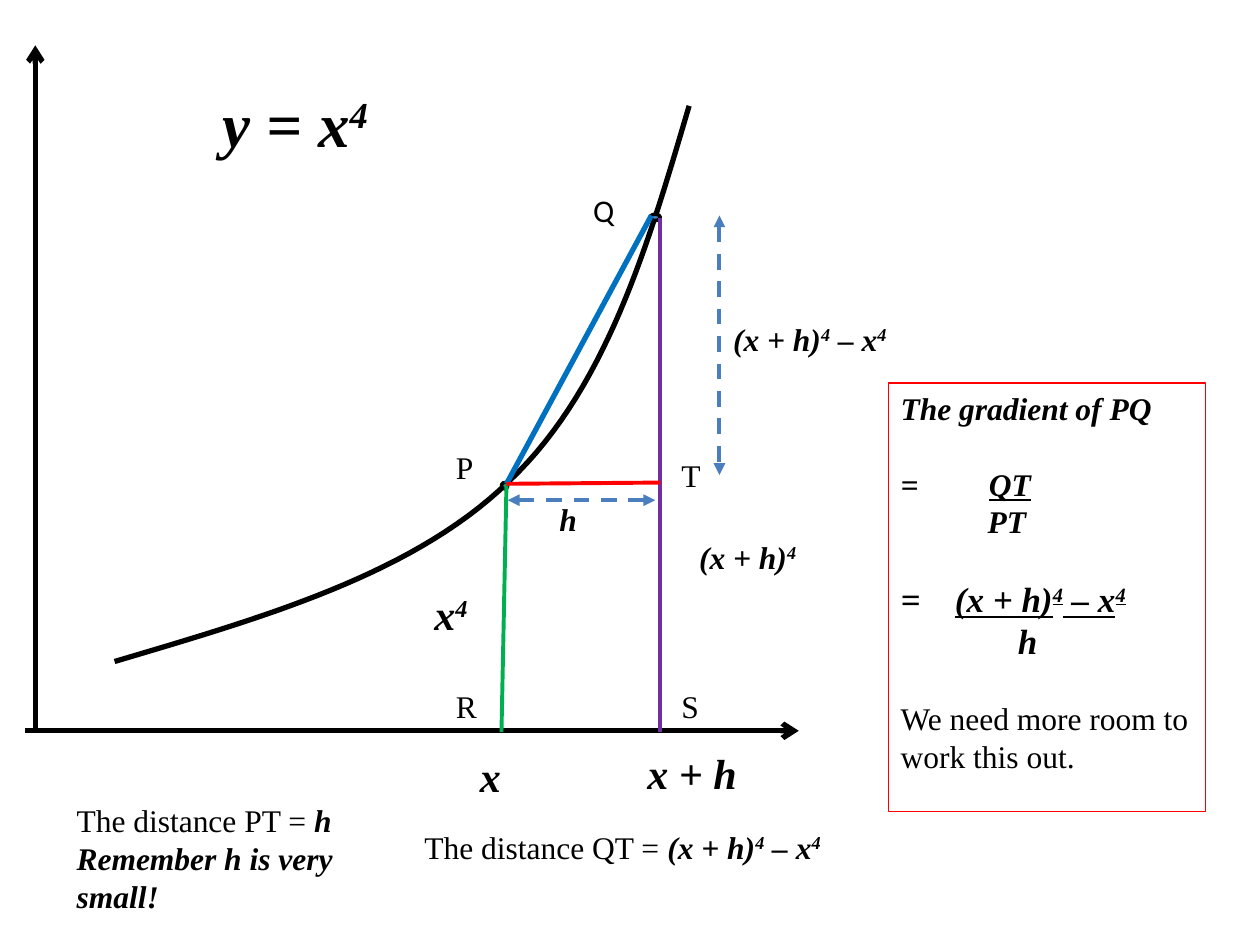
from lxml import etree
from pptx import Presentation
from pptx.dml.color import RGBColor
from pptx.enum.dml import MSO_LINE
from pptx.enum.shapes import MSO_CONNECTOR, MSO_SHAPE
from pptx.enum.text import MSO_ANCHOR, MSO_AUTO_SIZE, PP_ALIGN
from pptx.oxml.ns import qn
from pptx.util import Inches, Pt

BLACK = RGBColor(0x00, 0x00, 0x00)
RED = RGBColor(0xFF, 0x00, 0x00)
GREEN = RGBColor(0x00, 0xB0, 0x50)
PURPLE = RGBColor(0x70, 0x30, 0xA0)
CHORD_BLUE = RGBColor(0x00, 0x70, 0xC0)
ARROW_BLUE = RGBColor(0x4B, 0x7E, 0xBC)
POINT_BLUE = RGBColor(0x4F, 0x81, 0xBD)
SERIF = "Times New Roman"

prs = Presentation()
prs.slide_width, prs.slide_height = Inches(10), Inches(7.5)
s = prs.slides.add_slide(prs.slide_layouts[6])


def add_runs(p, runs, size, font=SERIF):
    """Runs are (text, style): b bold italic, u underlined, s superscript."""
    for text, style in runs:
        r = p.add_run()
        r.text = text
        r.font.name, r.font.size = font, Pt(size)
        r.font.color.rgb = BLACK
        r.font.bold = r.font.italic = "b" in style
        r.font.underline = "u" in style
        if "s" in style:
            r._r.get_or_add_rPr().set("baseline", "30000")


def add_line(x1, y1, x2, y2, color, width, head=None, tail=None):
    line = s.shapes.add_connector(MSO_CONNECTOR.STRAIGHT, Inches(x1), Inches(y1),
                                  Inches(x2), Inches(y2))
    line.line.color.rgb, line.line.width = color, Pt(width)
    ln = line.line._get_or_add_ln()
    if head:
        line.line.dash_style = MSO_LINE.DASH
    for tag, kind in (("a:headEnd", head), ("a:tailEnd", tail)):
        if kind:
            etree.SubElement(ln, qn(tag)).set("type", kind)
    etree.SubElement(line._element.spPr, qn("a:effectLst"))


# Curve: two cubic Bezier pieces, sampled
pieces = [[(0.91, 5.25), (2.09, 4.9), (3.28, 4.56), (4.04, 3.82)],
          [(4.04, 3.82), (4.81, 3.09), (5.14, 1.96), (5.47, 0.84)]]
STEPS = 30
points = []
for piece in pieces:
    for i in range(STEPS + 1):
        t = i / STEPS
        weights = ((1 - t) ** 3, 3 * t * (1 - t) ** 2, 3 * t ** 2 * (1 - t), t ** 3)
        points.append(tuple(Inches(sum(w * c[axis] for w, c in zip(weights, piece)))
                            for axis in (0, 1)))
builder = s.shapes.build_freeform(*points[0])
builder.add_line_segments(points[1:], close=False)
curve = builder.convert_to_shape()
curve.shadow.inherit = False
curve.fill.background()
curve.line.color.rgb, curve.line.width = BLACK, Pt(3)

# Axes
add_line(0.2, 5.8, 6.34, 5.8, BLACK, 3, tail="arrow")
add_line(0.28, 5.81, 0.28, 0.36, BLACK, 3, tail="arrow")

# Points P and Q
for x, y, w in ((3.98, 3.83, 0.05), (5.16, 1.7, 0.08)):
    sp = s.shapes.add_shape(MSO_SHAPE.OVAL, Inches(x), Inches(y), Inches(w), Inches(0.05))
    sp.shadow.inherit = False
    sp.fill.solid()
    sp.fill.fore_color.rgb = POINT_BLUE
    sp.line.color.rgb, sp.line.width = BLACK, Pt(2)

# Chord PQ, then PR, QS and PT
add_line(4.02, 3.84, 5.17, 1.71, CHORD_BLUE, 3)
add_line(4.02, 3.84, 3.98, 5.81, GREEN, 2.25)
add_line(5.24, 1.73, 5.24, 5.81, PURPLE, 2.25)
add_line(4.02, 3.84, 5.24, 3.83, RED, 2.25)

# Dimension arrows for QT and PT
add_line(5.71, 1.71, 5.71, 3.77, ARROW_BLUE, 2.25, "triangle", "triangle")
add_line(4.03, 3.97, 5.2, 3.97, ARROW_BLUE, 2.25, "triangle", "triangle")

# Labels and notes: left, top, width, height, size, font, paragraphs
sum_power = [("(x + h)", "b"), ("4", "bs")]
difference = sum_power + [(" – x", "b"), ("4", "bs")]
labels = [
    (3.52, 3.51, 0.39, 0.4, 18, SERIF, [[("P", "")]]),
    (4.61, 1.47, 0.55, 0.4, 18, "Calibri", [[("Q", "")]]),
    (3.52, 5.4, 0.39, 0.4, 18, SERIF, [[("R", "")]]),
    (5.31, 5.4, 0.39, 0.4, 18, SERIF, [[("S", "")]]),
    (5.31, 3.57, 0.39, 0.4, 18, SERIF, [[("T", "")]]),
    (1.67, 0.62, 2.05, 0.71, 36, SERIF, [[("y = x", "b"), ("4", "bs")]]),
    (3.71, 5.91, 0.5, 0.5, 24, SERIF, [[("x", "b")]]),
    (5.04, 5.88, 1.22, 0.5, 24, SERIF, [[("x + h", "b")]]),
    (3.35, 4.62, 0.56, 0.5, 24, SERIF, [[("x", "b"), ("4", "bs")]]),
    (5.45, 4.22, 1.04, 0.4, 18, SERIF, [sum_power]),
    (5.72, 2.49, 1.48, 0.4, 18, SERIF, [difference]),
    (4.34, 3.92, 0.51, 0.4, 18, SERIF, [[("h", "b")]]),
    (0.51, 6.31, 2.36, 1.01, 18, SERIF,
     [[("The distance PT = ", ""), ("h", "b")], [("Remember h is very small!", "b")]]),
    (3.27, 6.52, 3.62, 0.4, 18, SERIF, [[("The distance QT = ", "")] + difference]),
]
for x, y, w, h, size, font, paragraphs in labels:
    tf = s.shapes.add_textbox(Inches(x), Inches(y), Inches(w), Inches(h)).text_frame
    tf.word_wrap = True
    tf.auto_size = MSO_AUTO_SIZE.SHAPE_TO_FIT_TEXT
    for i, runs in enumerate(paragraphs):
        add_runs(tf.add_paragraph() if i else tf.paragraphs[0], runs, size, font)

# Gradient box: runs, size, space before, tab stop
sp = s.shapes.add_shape(MSO_SHAPE.RECTANGLE, Inches(7.05), Inches(3.04),
                        Inches(2.52), Inches(3.4))
sp.shadow.inherit = False
sp.fill.background()
sp.line.color.rgb, sp.line.width = RED, Pt(0.75)
tf = sp.text_frame
tf.word_wrap = True
tf.vertical_anchor = MSO_ANCHOR.TOP
working = [
    ([("The gradient of PQ", "b")], 18, 0, None),
    ([("=\t", "b"), ("QT", "bu")], 18, 21.5, 0.7),
    ([("\tPT", "b")], 18, 0, 0.69),
    ([("=\t", "b")] + [(text, style + "u") for text, style in difference], 20, 21.5, 0.43),
    ([("\th", "b")], 20, 0, 0.93),
    ([("We need more room to work this out.", "")], 18, 21.5, None),
]
for i, (runs, size, gap, tab) in enumerate(working):
    p = tf.add_paragraph() if i else tf.paragraphs[0]
    p.alignment = PP_ALIGN.LEFT
    p.space_before = Pt(gap)
    if tab:
        stops = etree.SubElement(p._p.get_or_add_pPr(), qn("a:tabLst"))
        etree.SubElement(stops, qn("a:tab"), pos=str(Inches(tab)), algn="l")
    add_runs(p, runs, size)

prs.save("out.pptx")
